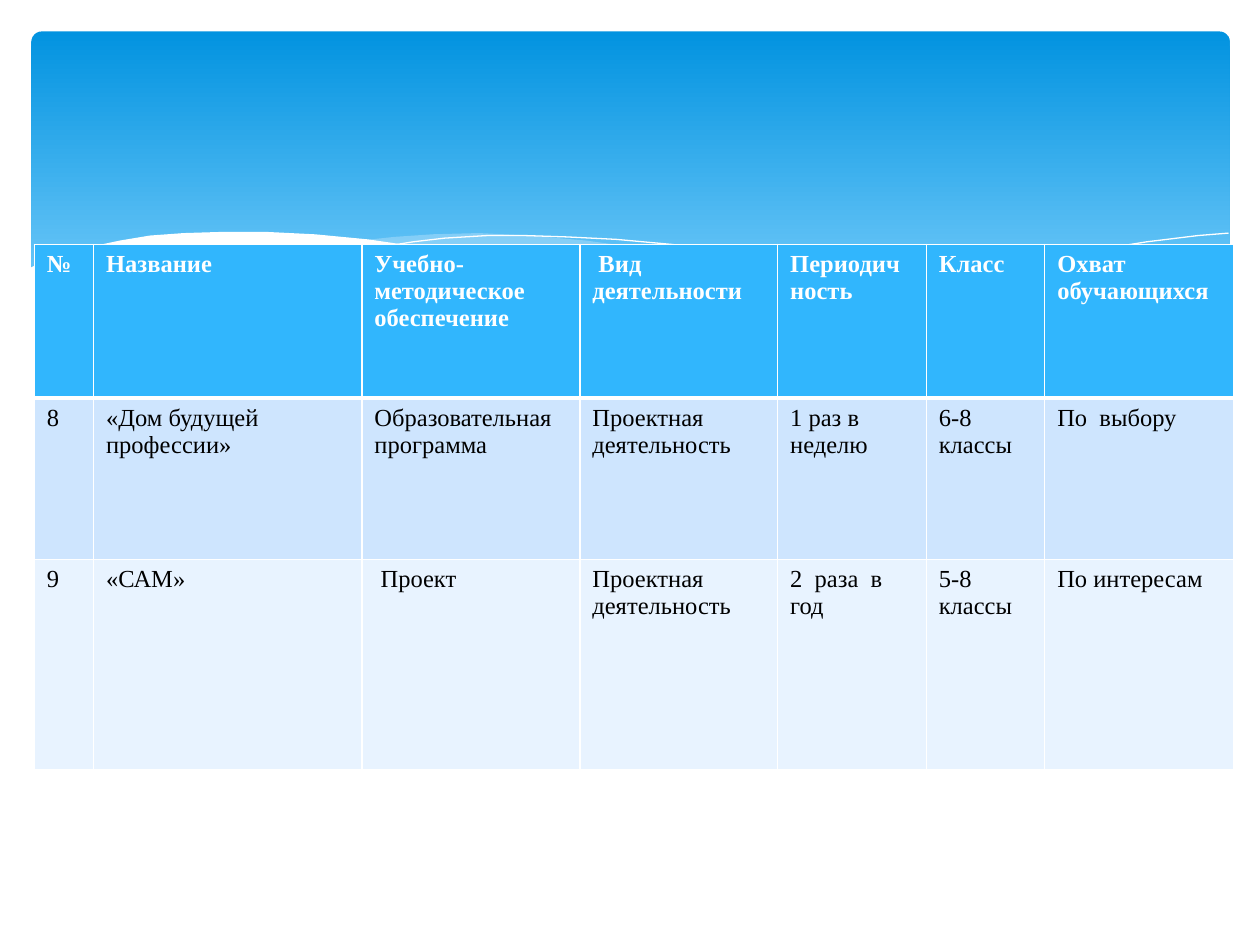
from dataclasses import dataclass
from typing import Optional

import lxml.etree
import pptx
import pptx.dml.color
import pptx.enum.shapes
import pptx.oxml.ns
import pptx.util

Pt = pptx.util.Pt
RGBColor = pptx.dml.color.RGBColor
qn = pptx.oxml.ns.qn

WHITE = RGBColor(0xFF, 0xFF, 0xFF)
BLACK = RGBColor(0x00, 0x00, 0x00)
BANNER_TOP = RGBColor(0x02, 0x93, 0xE0)
BANNER_BOTTOM = RGBColor(0x83, 0xD3, 0xFE)
PALE_WAVE = RGBColor(0xC6, 0xE7, 0xFC)
HEADER_BLUE = RGBColor(0x31, 0xB6, 0xFD)
BAND_BLUE = RGBColor(0xCE, 0xE5, 0xFE)
BAND_LIGHT = RGBColor(0xE8, 0xF3, 0xFF)
FONT = "Times New Roman"


@dataclass(frozen=True)
class Wave:
    points: list[tuple[float, float]]
    fill: Optional[RGBColor] = None
    opacity: int = 100


@dataclass(frozen=True)
class Row:
    height: float
    fill: RGBColor
    color: RGBColor
    bold: bool
    top_border: float
    bottom_border: float
    texts: list[str]


WAVES = [
    Wave([(702, 144), (675.4, 147), (652.3, 151.2), (619.9, 158.4), (579.6, 167.8),
          (542.2, 178.6), (508.3, 185.1), (475.9, 190.8), (507.6, 195.1), (536.4, 198),
          (562.3, 199.4), (586.1, 200.2), (615, 198.7), (640.8, 196.6), (668.2, 191),
          (683.3, 185), (702.7, 177.8), (702.7, 144)], PALE_WAVE, 29),
    Wave([(643, 196.6), (602.6, 190.8), (558, 182.9), (508.3, 172.8), (452.9, 159.8),
          (420.5, 151.9), (389.5, 146.2), (361.4, 141.1), (334.8, 137.5), (302.4, 134.6),
          (273.6, 133.2), (247.7, 133.9), (225.4, 135.4), (205.9, 137.5), (232.6, 141.1),
          (260.6, 146.2), (290.9, 151.9), (323.3, 159.8), (381.6, 172.8), (432.7, 183.6),
          (478.8, 191.5), (521, 197.3), (556.6, 199.4), (589, 200.2), (617, 199.4)],
         PALE_WAVE, 40),
    Wave([(222.5, 140.4), (236.2, 138.2), (254.2, 136.1), (278.6, 134.6), (299.5, 134.6),
          (324, 135.4), (352.1, 136.8), (383.8, 139.7), (419, 144), (457.9, 149.8),
          (500.4, 157.7), (547.2, 167.8), (598.3, 180.7), (653, 195.8)]),
    Wave([(441.4, 185), (470.2, 177.1), (500.4, 169.2), (538.6, 160.6), (580.3, 151.2),
          (623.5, 143.3), (655.2, 138.2), (684.7, 134.6), (702, 133.2)]),
    Wave([(703.4, 177.1), (684, 184.3), (662.4, 190.8), (638.6, 195.1), (612, 198),
          (582.5, 199.4), (547.9, 198), (509.8, 194.4), (466.6, 188.6), (416.9, 180),
          (362.2, 167.8), (321.8, 158.4), (281.5, 149), (244.8, 141.8), (210.2, 136.8),
          (180, 133.9), (151.9, 132.5), (127.4, 132.5), (105.1, 133.2), (85.7, 134.6),
          (68.4, 137.5), (54.7, 140.4), (42.5, 143.3), (33.1, 146.2), (25.9, 149),
          (20.9, 151.2), (16.6, 153.4), (16.6, 236.9), (703.4, 236.9)], WHITE),
]

COLUMN_WIDTHS = [33.84, 153.36, 124.56, 113.04, 84.96, 67.68, 108]
ROWS = [
    Row(87.84, HEADER_BLUE, WHITE, True, 1, 3,
        ["№", "Название", "Учебно-методическое обеспечение", " Вид деятельности",
         "Периодичность", "Класс", "Охват обучающихся"]),
    Row(92.16, BAND_BLUE, BLACK, False, 3, 1,
        ["8", "«Дом будущей профессии»", "Образовательная  программа",
         "Проектная деятельность", "1 раз в неделю", "6-8 классы", "По  выбору"]),
    Row(120.24, BAND_LIGHT, BLACK, False, 1, 1,
        ["9", "«САМ»", " Проект", "Проектная деятельность", "2  раза  в год",
         "5-8 классы", "По интересам"]),
]


def draw_banner(slide) -> None:
    banner = slide.shapes.add_shape(
        pptx.enum.shapes.MSO_SHAPE.ROUNDED_RECTANGLE, Pt(18), Pt(18), Pt(684.7), Pt(194.4))
    banner.adjustments[0] = 0.03
    banner.shadow.inherit = False
    banner.line.fill.background()
    banner.fill.gradient()
    banner.fill.gradient_angle = 270
    for stop, color, position in zip(
            banner.fill.gradient_stops, (BANNER_TOP, BANNER_BOTTOM), (0, 0.9)):
        stop.color.rgb = color
        stop.position = position


def draw_wave(slide, wave: Wave) -> None:
    start, *rest = [(Pt(x), Pt(y)) for x, y in wave.points]
    builder = slide.shapes.build_freeform(*start)
    builder.add_line_segments(rest, close=wave.fill is not None)
    outline = builder.convert_to_shape()
    outline.shadow.inherit = False
    if wave.fill is None:
        outline.fill.background()
        outline.line.color.rgb = WHITE
        outline.line.width = Pt(0)
        return
    outline.line.fill.background()
    outline.fill.solid()
    outline.fill.fore_color.rgb = wave.fill
    if wave.opacity < 100:
        color = outline.element.spPr.find(qn("a:solidFill"))[0]
        lxml.etree.SubElement(color, qn("a:alpha"), val=str(wave.opacity * 1000))


def draw_border(cell, side: str, width: float) -> None:
    properties = cell._tc.get_or_add_tcPr()
    border = lxml.etree.SubElement(properties, qn(f"a:ln{side}"), w=str(Pt(width)))
    fill = lxml.etree.SubElement(border, qn("a:solidFill"))
    lxml.etree.SubElement(fill, qn("a:srgbClr"), val=str(WHITE))


def fill_cell(cell, text: str, row: Row) -> None:
    for side, width in (("L", 1), ("R", 1), ("T", row.top_border), ("B", row.bottom_border)):
        draw_border(cell, side, width)
    cell.fill.solid()
    cell.fill.fore_color.rgb = row.fill
    run = cell.text_frame.paragraphs[0].add_run()
    run.text = text
    run.font.name = FONT
    run.font.size = Pt(14)
    run.font.bold = row.bold
    run.font.color.rgb = row.color


def draw_programmes(slide) -> None:
    programmes = slide.shapes.add_table(
        len(ROWS), len(COLUMN_WIDTHS), Pt(19.6), Pt(139.7),
        Pt(sum(COLUMN_WIDTHS)), Pt(sum(row.height for row in ROWS))).table
    for column, width in zip(programmes.columns, COLUMN_WIDTHS):
        column.width = Pt(width)
    for table_row, row in zip(programmes.rows, ROWS):
        table_row.height = Pt(row.height)
        for cell, text in zip(table_row.cells, row.texts):
            fill_cell(cell, text, row)


def main() -> None:
    presentation = pptx.Presentation()
    presentation.slide_width = Pt(720)
    presentation.slide_height = Pt(540)
    slide = presentation.slides.add_slide(presentation.slide_layouts[6])
    slide.background.fill.solid()
    slide.background.fill.fore_color.rgb = WHITE
    draw_banner(slide)
    for wave in WAVES:
        draw_wave(slide, wave)
    draw_programmes(slide)
    presentation.save("out.pptx")


if __name__ == "__main__":
    main()
